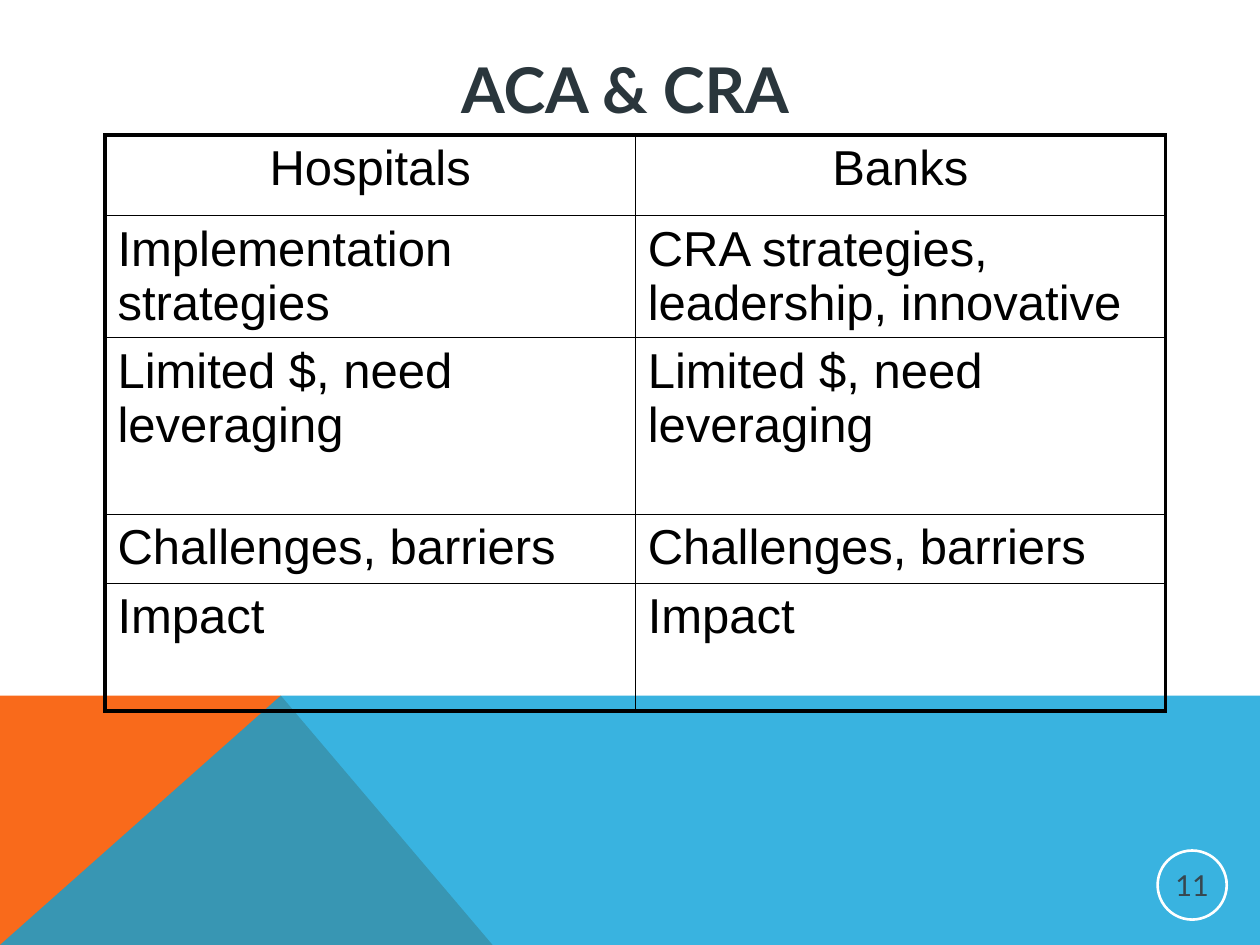
from lxml import etree
from pptx import Presentation
from pptx.dml.color import RGBColor
from pptx.enum import text
from pptx.oxml import ns
from pptx.util import Pt

BLACK = RGBColor(0, 0, 0)
WHITE = RGBColor(0xFF, 0xFF, 0xFF)
ORANGE = RGBColor(0xF9, 0x6A, 0x1B)
BLUE = RGBColor(0x08, 0xA1, 0xD9)
TITLE_INK = RGBColor(0x2A, 0x36, 0x3C)
NUMBER_INK = RGBColor(0x37, 0x47, 0x4F)

W, H = 720, 540
HORIZON, PEAK = 397.5, 160.5
# outline points, fill, opacity in percent
BANDS = [
    ([(0, H), (0, HORIZON), (PEAK, HORIZON), (281.5, H)], ORANGE, 100),
    ([(0, H), (PEAK, HORIZON), (W, HORIZON), (W, H)], BLUE, 80),
]
TITLE = "ACA & CRA "
NUMBER = "11"
ROWS = [
    ("Hospitals", "Banks"),
    ("Implementation strategies", "CRA strategies, leadership, innovative"),
    ("Limited $, need leveraging", "Limited $, need leveraging"),
    ("Challenges, barriers", "Challenges, barriers"),
    ("Impact", "Impact"),
]
ROW_HEIGHTS = [46, 69, 101, 39.5, 73]
COL_WIDTH = 303
TABLE_LEFT, TABLE_TOP = 60, 77.25
OUTER, INNER = 2.25, 1


def write(tf, words, align, color, **font):
    tf.word_wrap = True
    p = tf.paragraphs[0]
    p.alignment = align
    r = p.add_run()
    r.text = words
    r.font.color.rgb = color
    for name, value in font.items():
        setattr(r.font, name, value)


def add_band(s, points, color, opacity):
    pts = [(Pt(x), Pt(y)) for x, y in points]
    fb = s.shapes.build_freeform(*pts[0], scale=1.0)
    fb.add_line_segments(pts[1:], close=True)
    sp = fb.convert_to_shape()
    sp.shadow.inherit = False
    sp.line.fill.background()
    sp.fill.solid()
    sp.fill.fore_color.rgb = color
    if opacity < 100:
        clr = sp.fill._xPr.find(".//" + ns.qn("a:srgbClr"))
        etree.SubElement(clr, ns.qn("a:alpha"), val=str(opacity * 1000))


def set_borders(cell, widths):
    """Widths are in points, in the order left, right, top, bottom."""
    tcPr = cell._tc.get_or_add_tcPr()
    for side, width in zip("LRTB", widths):
        ln = etree.SubElement(tcPr, ns.qn("a:ln" + side), w=str(Pt(width)))
        fill = etree.SubElement(ln, ns.qn("a:solidFill"))
        etree.SubElement(fill, ns.qn("a:srgbClr"), val=str(BLACK))


def add_comparison(s):
    n_rows, n_cols = len(ROWS), len(ROWS[0])
    table = s.shapes.add_table(
        n_rows, n_cols, Pt(TABLE_LEFT), Pt(TABLE_TOP),
        Pt(COL_WIDTH * n_cols), Pt(sum(ROW_HEIGHTS))).table
    table.first_row = table.horz_banding = False
    for col in table.columns:
        col.width = Pt(COL_WIDTH)
    for i, (words, height) in enumerate(zip(ROWS, ROW_HEIGHTS)):
        table.rows[i].height = Pt(height)
        align = text.PP_ALIGN.LEFT if i else text.PP_ALIGN.CENTER
        for j, word in enumerate(words):
            cell = table.cell(i, j)
            edges = (j == 0, j == n_cols - 1, i == 0, i == n_rows - 1)
            set_borders(cell, [OUTER if edge else INNER for edge in edges])
            cell.fill.background()
            write(cell.text_frame, word, align, BLACK, name="Arial", size=Pt(28))


def add_number(s):
    sp = s.shapes.add_shape(9, Pt(661.5), Pt(486), Pt(39.5), Pt(39.5))
    sp.shadow.inherit = False
    sp.fill.background()
    sp.line.color.rgb = WHITE
    sp.line.width = Pt(1.5)
    tf = sp.text_frame
    for side in ("left", "right", "top", "bottom"):
        setattr(tf, "margin_" + side, Pt(0.75))
    tf.vertical_anchor = text.MSO_ANCHOR.MIDDLE
    write(tf, NUMBER, text.PP_ALIGN.CENTER, NUMBER_INK, name="Lato", size=Pt(16.5))


def main():
    prs = Presentation()
    prs.slide_width, prs.slide_height = Pt(W), Pt(H)
    s = prs.slides.add_slide(prs.slide_layouts[5])
    for band in BANDS:
        add_band(s, *band)

    title = s.shapes.title
    title.left, title.top, title.width, title.height = Pt(65), Pt(29), Pt(592), Pt(43)
    tf = title.text_frame
    tf.auto_size = text.MSO_AUTO_SIZE.NONE
    tf.vertical_anchor = text.MSO_ANCHOR.MIDDLE
    write(tf, TITLE, text.PP_ALIGN.CENTER, TITLE_INK,
          name="Lato", size=Pt(36), bold=True)

    add_number(s)
    add_comparison(s)
    prs.save("out.pptx")


if __name__ == "__main__":
    main()
